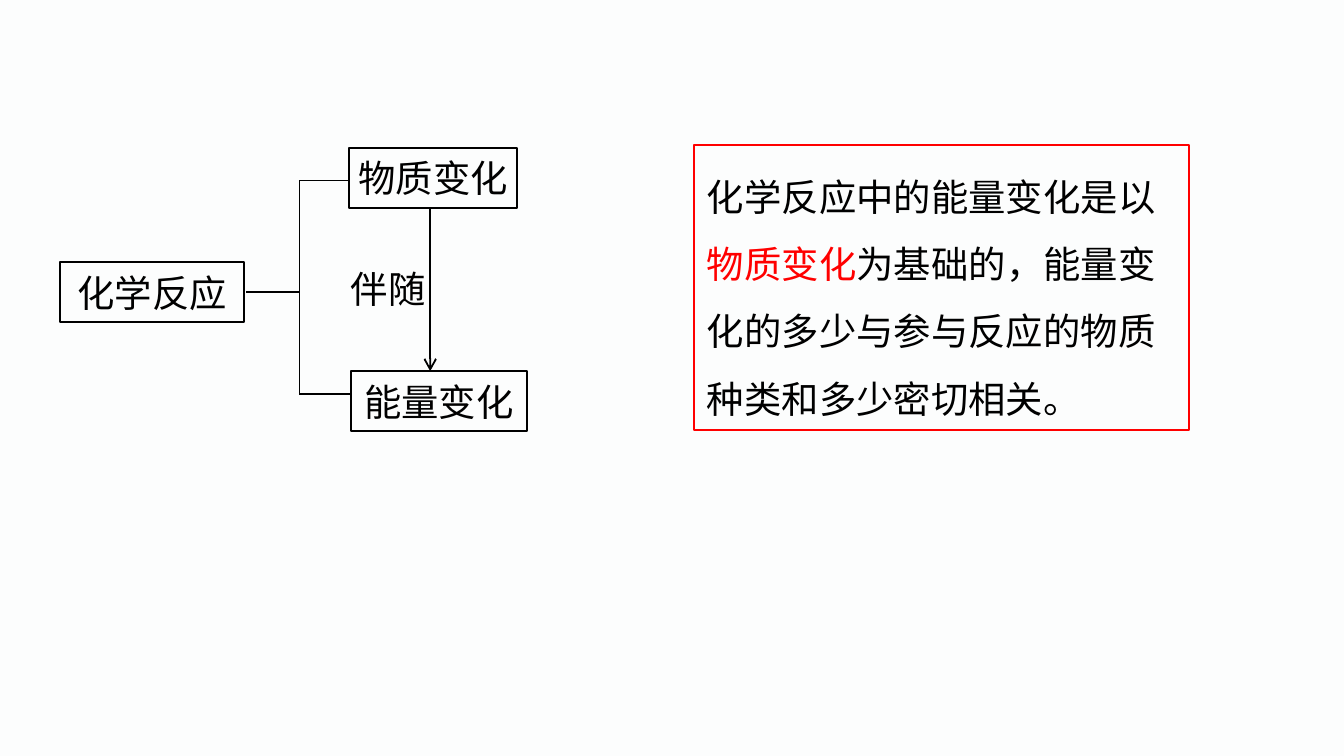
import pptx
import pptx.util
import pptx.dml.color
import pptx.enum.shapes
import pptx.enum.text
import pptx.oxml.ns
from dataclasses import dataclass
from lxml import etree

Cm, Pt = pptx.util.Cm, pptx.util.Pt
RGB = pptx.dml.color.RGBColor
Align = pptx.enum.text.PP_ALIGN
Anchor = pptx.enum.text.MSO_ANCHOR
qn = pptx.oxml.ns.qn


@dataclass(frozen=True)
class Theme:
    font: str = "Noto Sans CJK SC"
    size: int = 20
    line: int = 1
    back: RGB = RGB(0xFC, 0xFD, 0xFD)
    ink: RGB = RGB(0, 0, 0)
    mark: RGB = RGB(0xFF, 0, 0)


THEME = Theme()


def write(shape, runs, align=Align.CENTER, inset=0.15, space=None):
    """Fill a shape with one paragraph of (text, colour) runs."""
    frame = shape.text_frame
    frame.word_wrap = True
    frame.auto_size = pptx.enum.text.MSO_AUTO_SIZE.SHAPE_TO_FIT_TEXT
    frame.vertical_anchor = Anchor.TOP
    if inset is not None:
        frame.margin_left = frame.margin_right = Cm(inset)
        frame.margin_top = frame.margin_bottom = Cm(inset)
    para = frame.paragraphs[0]
    para.alignment = align
    para.line_spacing = space
    for text, color in runs:
        run = para.add_run()
        run.text = text
        run.font.size = Pt(THEME.size)
        run.font.name = THEME.font
        run.font.color.rgb = color
        # East Asian glyphs take their own typeface entry
        east = etree.SubElement(run.font._element, qn("a:ea"))
        east.set("typeface", THEME.font)


def frame_box(slide, spot, color):
    """Add an unfilled rectangle with a thin outline."""
    kind = pptx.enum.shapes.MSO_SHAPE.RECTANGLE
    box = slide.shapes.add_shape(kind, *map(Cm, spot))
    box.shadow.inherit = False
    box.fill.background()
    box.line.color.rgb = color
    box.line.width = Pt(THEME.line)
    return box


def label(slide, spot, text):
    box = slide.shapes.add_textbox(*map(Cm, spot))
    write(box, [(text, THEME.ink)])


def link(slide, ends, arrow=False):
    """Add a straight line, with an open arrowhead at its end if asked."""
    kind = pptx.enum.shapes.MSO_CONNECTOR.STRAIGHT
    line = slide.shapes.add_connector(kind, *map(Cm, ends))
    line.line.color.rgb = THEME.ink
    line.line.width = Pt(THEME.line)
    if arrow:
        tip = etree.SubElement(line.line._get_or_add_ln(), qn("a:tailEnd"))
        tip.set("type", "arrow")
    etree.SubElement(line._element.spPr, qn("a:effectLst"))


def main():
    deck = pptx.Presentation()
    deck.slide_width, deck.slide_height = Cm(25.4), Cm(14.28)
    slide = deck.slides.add_slide(deck.slide_layouts[6])
    slide.background.fill.solid()
    slide.background.fill.fore_color.rgb = THEME.back

    # Concept boxes
    tall = 1.14
    nodes = [
        ("化学反应", 1.14, 4.95, 3.48, Anchor.TOP),
        ("物质变化", 6.6, 2.79, 3.18, Anchor.MIDDLE),
        ("能量变化", 6.63, 7.01, 3.33, Anchor.MIDDLE),
    ]
    for text, left, top, wide, anchor in nodes:
        box = frame_box(slide, (left, top, wide, tall), THEME.ink)
        write(box, [(text, THEME.ink)])
        box.text_frame.vertical_anchor = anchor

    # Bracket from the reaction to its two changes
    stem, high, low = 5.66, 3.41, 7.44
    link(slide, (4.65, 5.51, stem, 5.51))
    link(slide, (stem, high, stem, low))
    for level in (high, low):
        link(slide, (stem, level, 6.62, level))

    # Arrow between the changes
    link(slide, (8.13, 3.94, 8.13, 7.01), arrow=True)
    label(slide, (6.46, 4.88, 1.75, tall), "伴随")

    # Conclusion panel
    panel = frame_box(slide, (13.11, 2.74, 9.37, 5.38), THEME.mark)
    runs = [
        ("化学反应中的能量变化是以", THEME.ink),
        ("物质变化", THEME.mark),
        ("为基础的，能量变化的多少与参与反应的物质种类和多少密切相关。", THEME.ink),
    ]
    write(panel, runs, align=Align.LEFT, inset=None, space=1.5)

    deck.save("out.pptx")


if __name__ == "__main__":
    main()
